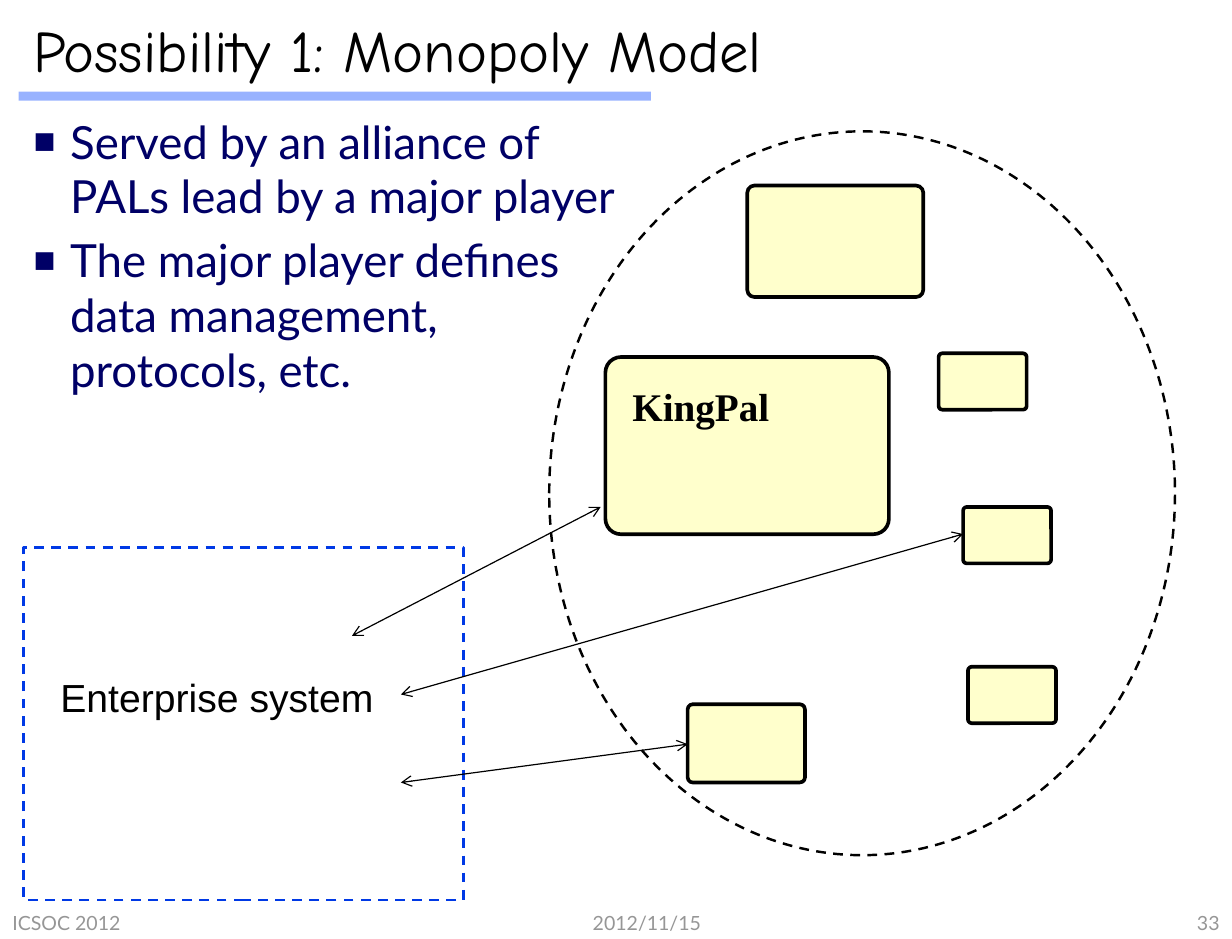
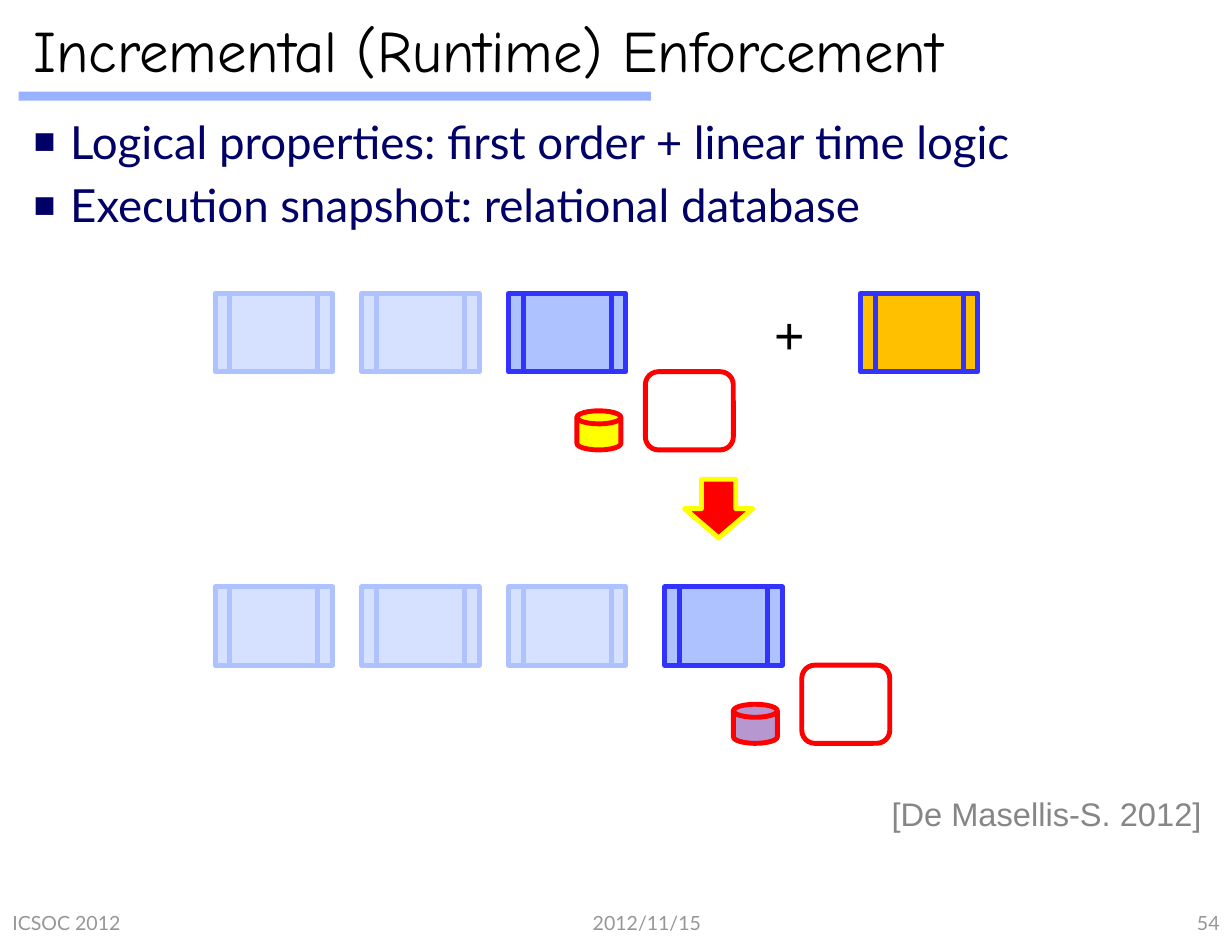
import pptx
import pptx.dml.color
import pptx.enum.dml
import pptx.enum.shapes
import pptx.enum.text
import pptx.oxml
import pptx.oxml.ns
import pptx.util

Pt = pptx.util.Pt
SHAPE = pptx.enum.shapes.MSO_SHAPE
ALIGN = pptx.enum.text.PP_ALIGN
ANCHOR = pptx.enum.text.MSO_ANCHOR
qn = pptx.oxml.ns.qn

COLORS = {
    "black": "000000", "navy": "000066", "band": "3366FF", "footer": "969696",
    "citation": "868686", "cream": "FFFFCC", "system": "0039E5",
    "past": "D6E0FF", "past_line": "ADC2FF", "current": "ADC2FF",
    "step_line": "3333FF", "next": "FFC000", "red": "FF0000",
    "yellow": "FFFF00", "purple": "7030A0",
}


def rgb(name):
    return pptx.dml.color.RGBColor.from_string(COLORS[name])


def sub(parent, tag, **attrs):
    """Append an XML element with the given attributes."""
    el = pptx.oxml.parse_xml(f"<{tag} {pptx.oxml.ns.nsdecls('a')}/>")
    for key, value in attrs.items():
        el.set(key, str(value))
    parent.append(el)
    return el


def add_text(tf, text, size=24, font="Arial", color="black", bold=False,
             align=ALIGN.LEFT, before=0, spacing=None, first=True):
    """Write one paragraph; a newline in the text is a line break."""
    p = tf.paragraphs[0] if first else tf.add_paragraph()
    p.text = text
    p.alignment = align
    p.space_before = Pt(before)
    if spacing:
        p.line_spacing = spacing
    for r in p.runs:
        r.font.size = Pt(size)
        r.font.name = font
        r.font.bold = bold
        r.font.color.rgb = rgb(color)
    return p


class Deck:
    """Holds the shared style and the current slide."""

    def __init__(self):
        self.prs = pptx.Presentation()
        self.prs.slide_width, self.prs.slide_height = Pt(756), Pt(576)
        self.s = None

    def new_slide(self, title, bullets, number):
        self.s = self.prs.slides.add_slide(self.prs.slide_layouts[6])
        self.shape(SHAPE.RECTANGLE, 11.5, 56.2, 388, 5.6, fill="band", alpha=50)
        self.bullets(bullets)
        add_text(self.box(13, 0, 731, 60, ANCHOR.MIDDLE), title, size=36,
                 font="Comic Neue")
        # Footer: date, event, slide number
        for x, w, text, align in ((318, 158, "2012/11/15", ALIGN.CENTER),
                                  (0, 240, "ICSOC 2012", ALIGN.LEFT),
                                  (598, 158, str(number), ALIGN.RIGHT)):
            add_text(self.box(x, 556.5, w, 19.5, ANCHOR.MIDDLE), text, size=12,
                     font="Lato", color="footer", align=align)

    def box(self, x, y, w, h, anchor=ANCHOR.TOP, wrap=True, inset=7.6):
        sp = self.s.shapes.add_textbox(Pt(x), Pt(y), Pt(w), Pt(h))
        tf = sp.text_frame
        tf.word_wrap = wrap
        tf.vertical_anchor = anchor
        tf.margin_left = tf.margin_right = Pt(inset)
        tf.margin_top = tf.margin_bottom = Pt(3.6)
        return tf

    def bullets(self, items):
        tf = self.box(13, 66, 731, 486)
        for i, item in enumerate(items):
            p = add_text(tf, item, size=28, font="Lato", color="navy",
                         before=5.6, first=i == 0)
            pPr = p._p.get_or_add_pPr()
            pPr.set("marL", str(Pt(22.5)))
            pPr.set("indent", str(-Pt(22.5)))
            sub(sub(pPr, "a:buClr"), "a:srgbClr", val=COLORS["navy"])
            sub(pPr, "a:buSzPct", val=80000)
            sub(pPr, "a:buFont", typeface="Arial")
            sub(pPr, "a:buChar", char="■")

    def label(self, x, y, w, h, text, size=24, **fmt):
        tf = self.box(x, y, w, h, wrap=False, inset=7.2)
        tf.auto_size = pptx.enum.text.MSO_AUTO_SIZE.SHAPE_TO_FIT_TEXT
        add_text(tf, text, size=size, before=0.2 * size, spacing=0.9, **fmt)

    def shape(self, kind, x, y, w, h, fill=None, line=None, width=1.5,
              dash=False, alpha=None, adj=None):
        sp = self.s.shapes.add_shape(kind, Pt(x), Pt(y), Pt(w), Pt(h))
        sp.shadow.inherit = False
        if adj is not None:
            sp.adjustments[0] = adj
        if fill:
            sp.fill.solid()
            sp.fill.fore_color.rgb = rgb(fill)
        else:
            sp.fill.background()
        if alpha:
            clr = sp._element.spPr.find(qn("a:solidFill")).find(qn("a:srgbClr"))
            sub(clr, "a:alpha", val=alpha * 1000)
        if line:
            sp.line.color.rgb = rgb(line)
            sp.line.width = Pt(width)
            if dash:
                sp.line.dash_style = pptx.enum.dml.MSO_LINE.DASH
        else:
            sp.line.fill.background()

    def provider(self, x, y, w, h, adj=0.065):
        self.shape(SHAPE.ROUNDED_RECTANGLE, x, y, w, h, "cream", "black", 2.25,
                   adj=adj)

    def arrow(self, x1, y1, x2, y2):
        """Thin line with an open arrowhead at both ends."""
        cx = self.s.shapes.add_connector(
            pptx.enum.shapes.MSO_CONNECTOR.STRAIGHT, Pt(x1), Pt(y1), Pt(x2), Pt(y2))
        cx.line.color.rgb = rgb("black")
        cx.line.width = Pt(0.75)
        ln = cx.line._get_or_add_ln()
        sub(ln, "a:headEnd", type="arrow")
        sub(ln, "a:tailEnd", type="arrow")
        sub(cx._element.spPr, "a:effectLst")

    def step(self, x, y, fill="past", line="past_line"):
        self.shape(SHAPE.FLOWCHART_PREDEFINED_PROCESS, x, y, 72, 48, fill, line, 3)

    def snapshot(self, x, y, fill, alpha=None):
        """Current step with its database and its frame below right."""
        self.step(x, y, "current", "step_line")
        self.shape(SHAPE.ROUNDED_RECTANGLE, x + 84, y + 48, 54, 48, line="red",
                   width=3)
        self.shape(SHAPE.FLOWCHART_MAGNETIC_DISK, x + 42, y + 72, 27, 24, fill,
                   "red", 3, alpha=alpha)


def monopoly_slide(deck):
    deck.new_slide("Possibility 1: Monopoly Model",
                   ["Served by an alliance of\nPALs lead by a major player",
                    "The major player defines\ndata management,\nprotocols, etc."],
                   33)
    # Enterprise system
    deck.shape(SHAPE.RECTANGLE, 14.4, 336, 270, 216, line="system", dash=True)
    deck.label(30, 412.5, 209, 33, "Enterprise system")
    # Alliance with its major player
    deck.provider(371.5, 219, 174, 108.7, adj=0.088)
    deck.label(381, 234, 99.4, 33, "KingPal", font="Times New Roman", bold=True)
    deck.shape(SHAPE.OVAL, 337, 80.6, 384, 444, line="black", dash=True)
    deck.provider(422, 432, 72, 48)
    deck.provider(458.6, 113.8, 108, 68.4)
    for x, y in ((576, 216.7), (594, 409), (591, 311)):
        deck.provider(x, y, 54, 34.6)
    # Exchanges
    for ends in ((216, 390, 368.6, 311), (246, 480, 422, 456.5),
                 (246, 426, 591, 327.6)):
        deck.arrow(*ends)


def enforcement_slide(deck):
    deck.new_slide("Incremental (Runtime) Enforcement",
                   ["Logical properties: first order + linear time logic",
                    "Execution snapshot: relational database"], 54)
    # Past steps, 90 pt apart: two before, three after
    for y, count in ((180, 2), (360, 3)):
        for i in range(count):
            deck.step(132 + 90 * i, y)
    # Current snapshots and the next step
    deck.snapshot(312, 180, "yellow")
    deck.label(468, 186, 33, 42.5, "+", size=32)
    deck.step(528, 180, "next", "step_line")
    deck.shape(SHAPE.DOWN_ARROW, 420, 294, 42, 36, "red", "yellow", 3)
    deck.snapshot(408, 360, "purple", alpha=50)
    deck.label(540, 486, 206.6, 28.8, "[De Masellis-S. 2012]", size=20,
               color="citation")


def main():
    deck = Deck()
    monopoly_slide(deck)
    enforcement_slide(deck)
    deck.prs.save("out.pptx")


if __name__ == "__main__":
    main()
